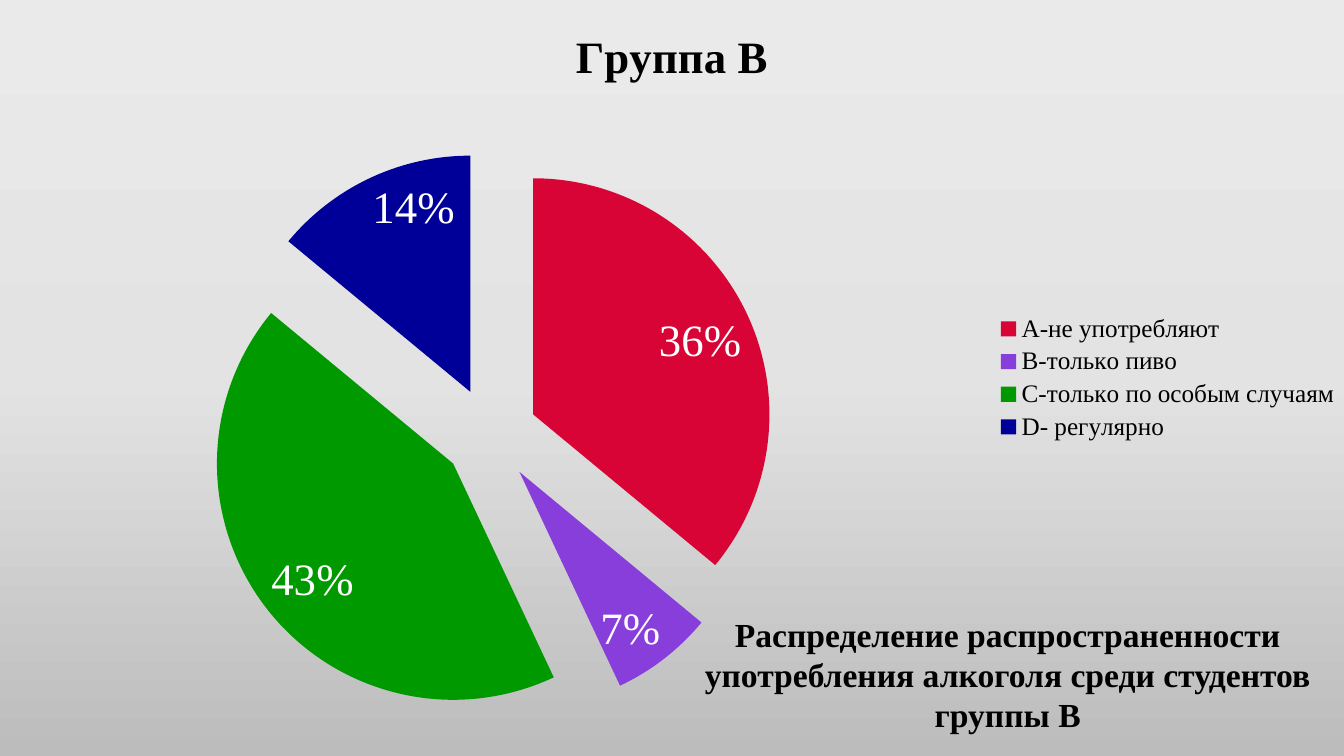
from lxml import etree
from pptx import Presentation
from pptx.chart.data import CategoryChartData
from pptx.dml.color import RGBColor
from pptx.enum.chart import XL_CHART_TYPE as ChartType
from pptx.enum.chart import XL_LABEL_POSITION as LabelPos
from pptx.enum.chart import XL_LEGEND_POSITION as LegendPos
from pptx.enum.text import MSO_AUTO_SIZE as AutoSize
from pptx.enum.text import PP_ALIGN as Align
from pptx.oxml import parse_xml
from pptx.oxml.ns import nsdecls, qn
from pptx.util import Cm, Pt

# Content
TITLE = "Группа В"
CAPTION = ("Распределение распространенности употребления алкоголя "
           "среди студентов группы В")
SLICES = [  # category, percent, colour name
    ("А-не употребляют", 36, "red"),
    ("В-только пиво", 7, "violet"),
    ("С-только по особым случаям", 43, "green"),
    ("D- регулярно", 14, "navy"),
]
COLORS = {
    "red": "D80436", "violet": "883EDA", "green": "009900", "navy": "000099",
    "text": "000000", "label": "FFFFFF",
    "bg_top": "EBEAEA", "bg_mid": "E4E3E3", "bg_bottom": "BDBCBC",
}
BACKGROUND = [(0, "bg_top"), (50, "bg_mid"), (100, "bg_bottom")]
FONT = "Times New Roman"
EXPLOSION = 20

# Placement: the chart fills the slide; layouts are fractions of it
WIDTH, HEIGHT = Cm(33.87), Cm(19.05)
PIE_BOX = {"x": 0.15, "y": 0.2, "w": 0.43, "h": 0.75}
LEGEND_BOX = {"x": 0.74, "y": 0.41, "w": 0.26, "h": 0.18}
CAPTION_BOX = Cm(16.93), Cm(15.34), Cm(16.93), Cm(3.33)


def rgb(name):
    return RGBColor.from_string(COLORS[name])


def set_font(font, size, color="text", bold=False):
    font.name, font.size, font.bold = FONT, Pt(size), bold
    font.color.rgb = rgb(color)


def manual_layout(box, inner=False):
    target = '<c:layoutTarget val="inner"/>' if inner else ""
    modes = "".join(f'<c:{k}Mode val="edge"/>' for k in "xy")
    sizes = "".join(f'<c:{k} val="{v}"/>' for k, v in box.items())
    return parse_xml(f'<c:layout {nsdecls("c")}><c:manualLayout>'
                     f'{target}{modes}{sizes}</c:manualLayout></c:layout>')


prs = Presentation()
prs.slide_width, prs.slide_height = WIDTH, HEIGHT
s = prs.slides.add_slide(prs.slide_layouts[6])

# Background gradient, top to bottom
fill = s.background.fill
fill.gradient()
grad = s.background._cSld.find(".//" + qn("a:gradFill"))
for child in list(grad):
    grad.remove(child)
stops = etree.SubElement(grad, qn("a:gsLst"))
for pos, name in BACKGROUND:
    stop = etree.SubElement(stops, qn("a:gs"), pos=str(pos * 1000))
    etree.SubElement(stop, qn("a:srgbClr"), val=COLORS[name])
etree.SubElement(grad, qn("a:lin"), ang=str(90 * 60000), scaled="0")

# Pie chart
data = CategoryChartData()
data.categories = [name for name, _, _ in SLICES]
data.add_series(TITLE, [value for _, value, _ in SLICES])
chart = s.shapes.add_chart(ChartType.PIE, 0, 0, WIDTH, HEIGHT, data).chart
chart.font.name, chart.font.size = "Calibri", Pt(18)
chart.font.color.rgb = rgb("text")

chart.has_title = True
p = chart.chart_title.text_frame.paragraphs[0]
p.text = TITLE
set_font(p.font, 32, bold=True)

# Slices and percent labels
plot = chart.plots[0]
plot.vary_by_categories = True
series = plot.series[0]
for i, (_, _, color) in enumerate(SLICES):
    slice_fill = series.points[i].format.fill
    slice_fill.solid()
    slice_fill.fore_color.rgb = rgb(color)
explosion = parse_xml(f'<c:explosion {nsdecls("c")} val="{EXPLOSION}"/>')
series._element.find(qn("c:dPt")).addprevious(explosion)

labels = series.data_labels
labels.show_percentage, labels.show_value = True, False
labels.number_format, labels.number_format_is_linked = "0%", False
labels.position = LabelPos.INSIDE_END
set_font(labels.font, 32, "label")

# Legend
chart.has_legend = True
legend = chart.legend
legend.position, legend.include_in_layout = LegendPos.RIGHT, False
set_font(legend.font, 18)

# Manual positions of pie and legend
plot_area = chart._chartSpace.find(".//" + qn("c:plotArea"))
for parent, box, inner in ((plot_area, PIE_BOX, True),
                           (legend._element, LEGEND_BOX, False)):
    old = parent.find(qn("c:layout"))
    if old is not None:
        parent.remove(old)
    layout = manual_layout(box, inner)
    if inner:
        parent.insert(0, layout)
    else:
        parent.find(qn("c:legendPos")).addnext(layout)

# Caption
tf = s.shapes.add_textbox(*CAPTION_BOX).text_frame
tf.word_wrap, tf.auto_size = True, AutoSize.SHAPE_TO_FIT_TEXT
p = tf.paragraphs[0]
p.text, p.alignment = CAPTION, Align.CENTER
set_font(p.font, 24, bold=True)

prs.save("out.pptx")
